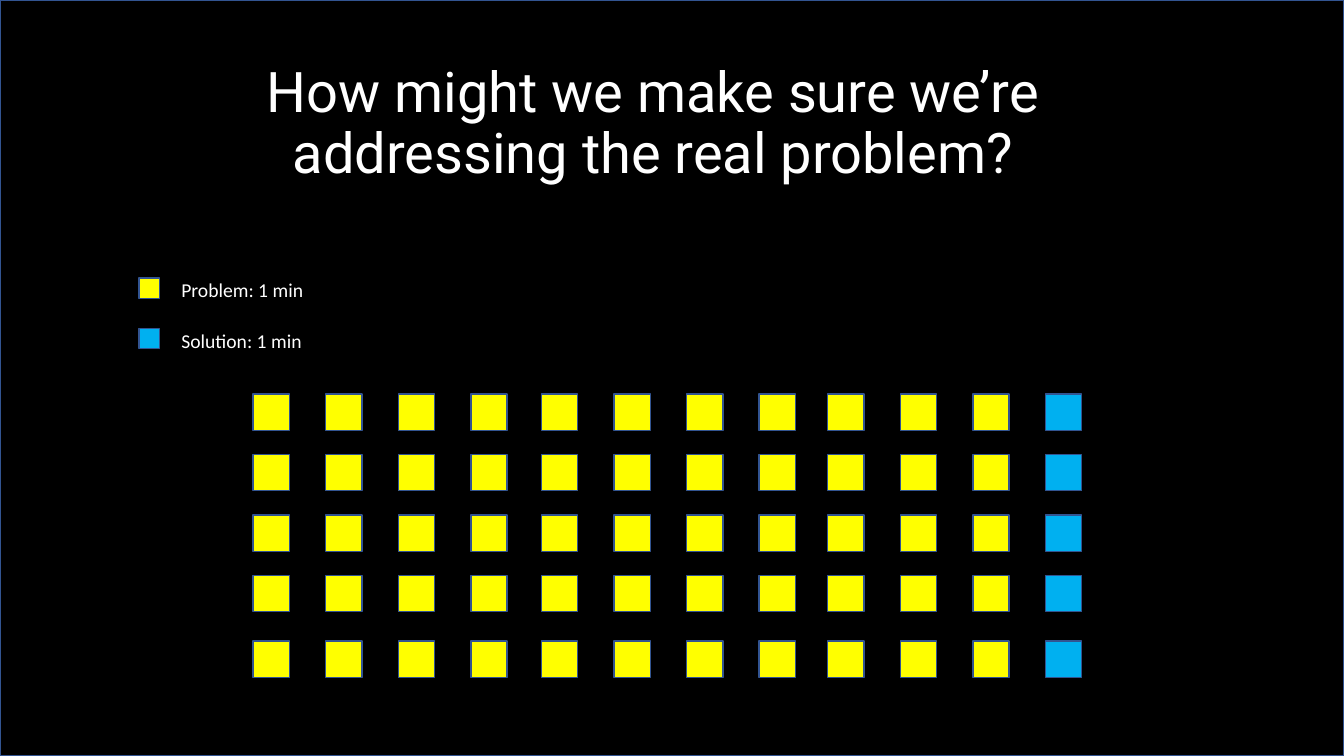
from pptx import Presentation
from pptx.dml.color import RGBColor
from pptx.enum.shapes import MSO_SHAPE
from pptx.enum.text import MSO_ANCHOR, MSO_AUTO_SIZE, PP_ALIGN
from pptx.util import Inches, Pt

WIDTH, HEIGHT = 13.33, 7.5
BLACK, WHITE, EDGE = "000000", "FFFFFF", "325491"
PROBLEM, SOLUTION = "FFFF00", "00B0F0"


def rgb(value):
    return RGBColor.from_string(value)


def add_rect(slide, x, y, w, h, fill):
    sp = slide.shapes.add_shape(
        MSO_SHAPE.RECTANGLE, Inches(x), Inches(y), Inches(w), Inches(h))
    sp.shadow.inherit = False
    sp.fill.solid()
    sp.fill.fore_color.rgb = rgb(fill)
    sp.line.color.rgb = rgb(EDGE)
    sp.line.width = Pt(1)
    return sp


def style(p, font, size):
    p.font.name = font
    p.font.size = Pt(size)
    p.font.color.rgb = rgb(WHITE)


def add_backdrop(slide):
    sp = add_rect(slide, 0, 0, WIDTH, HEIGHT, BLACK)
    # Send behind the title placeholder
    slide.shapes._spTree.insert(2, sp._element)


def add_title(slide, x, y, w, h, text):
    sp = slide.shapes.title
    sp.left, sp.top, sp.width, sp.height = map(Inches, (x, y, w, h))
    tf = sp.text_frame
    tf.text = text
    tf.word_wrap = True
    tf.auto_size = MSO_AUTO_SIZE.NONE
    tf.vertical_anchor = MSO_ANCHOR.TOP
    p = tf.paragraphs[0]
    p.alignment = PP_ALIGN.CENTER
    p.line_spacing = 0.9
    p.space_before = Pt(10)
    style(p, "Roboto", 40)


def add_legend(slide, x, y, pitch, entries):
    for i, (text, fill) in enumerate(entries):
        top = y + i * pitch
        add_rect(slide, x, top + 0.05, 0.2, 0.2, fill)
        box = slide.shapes.add_textbox(
            Inches(x + 0.32), Inches(top), Inches(1.7), Inches(0.34))
        tf = box.text_frame
        tf.word_wrap = True
        tf.auto_size = MSO_AUTO_SIZE.SHAPE_TO_FIT_TEXT
        tf.text = text
        style(tf.paragraphs[0], "Calibri", 14)


def add_minutes(slide, x, y, side=0.36):
    # Three blocks of four columns; the last row sits slightly lower
    columns = [x + block + 0.72 * i
               for block in (0, 2.86, 5.7) for i in range(4)]
    rows = [y + 0.6 * i for i in range(4)] + [y + 2.45]
    for left in columns:
        fill = SOLUTION if left == columns[-1] else PROBLEM
        for top in rows:
            add_rect(slide, left, top, side, side, fill)


def main():
    prs = Presentation()
    prs.slide_width, prs.slide_height = Inches(WIDTH), Inches(HEIGHT)
    s = prs.slides.add_slide(prs.slide_layouts[5])
    add_backdrop(s)
    add_title(s, 2.22, 0.59, 8.51, 2.25,
              "How might we make sure we’re addressing the real problem?")
    add_minutes(s, 2.51, 3.91)
    add_legend(s, 1.38, 2.71, 0.5, [("Problem: 1 min", PROBLEM),
                                    ("Solution: 1 min", SOLUTION)])
    prs.save("out.pptx")


if __name__ == "__main__":
    main()
